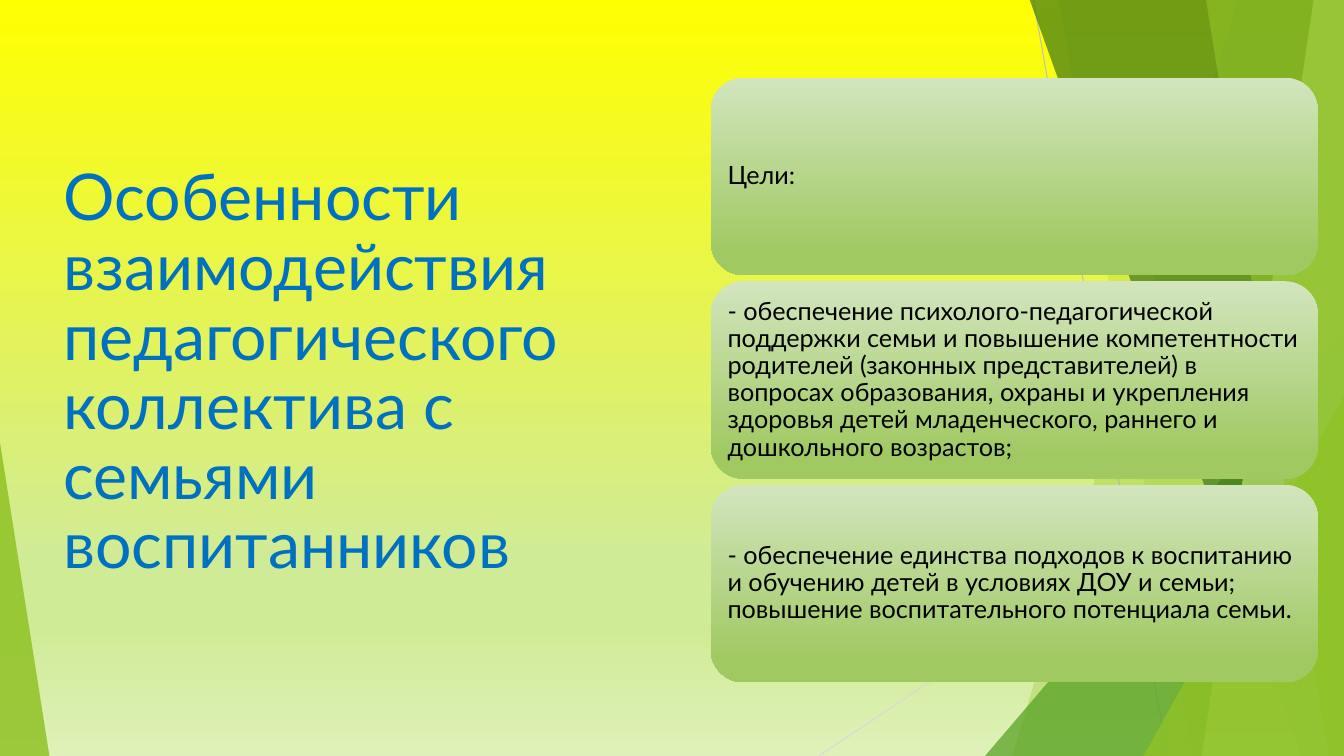
import pptx
import pptx.util
import pptx.dml.color
import pptx.enum.shapes
import pptx.enum.text
import pptx.oxml
import pptx.oxml.ns
import lxml.etree

Inches = pptx.util.Inches
qn = pptx.oxml.ns.qn
kinds = pptx.enum.shapes.MSO_SHAPE


def blend(fill, root, stops):
    fill.gradient()
    fill.gradient_angle = 270
    ramp = next(root.iter(qn("a:gsLst")))
    for old in list(ramp):
        ramp.remove(old)
    for spot, color in stops:
        stop = lxml.etree.SubElement(ramp, qn("a:gs"), pos=str(spot * 1000))
        lxml.etree.SubElement(stop, qn("a:srgbClr"), val=color)


def write(frame, text, size, color):
    frame.word_wrap = True
    frame.vertical_anchor = pptx.enum.text.MSO_ANCHOR.MIDDLE
    para = frame.paragraphs[0]
    para.alignment = pptx.enum.text.PP_ALIGN.LEFT
    para.line_spacing = 0.9
    run = para.add_run()
    run.text = text
    run.font.size = pptx.util.Pt(size)
    run.font.name = "Lato"
    run.font.color.rgb = pptx.dml.color.RGBColor.from_string(color)


deck = pptx.Presentation()
deck.slide_width, deck.slide_height = Inches(13.33), Inches(7.5)
slide = deck.slides.add_slide(deck.slide_layouts[6])
shapes = slide.shapes
blend(slide.background.fill, slide.element,
      [(0, "FFFF00"), (74, "D0EB96"), (83, "D0EB96"), (100, "DFF1B9")])

for x1, y1, x2, y2, color in [
    (10.25, 0, 11.58, 7.5, "BFBFBF"),
    (13.33, 4.03, 8.12, 7.5, "D9D9D9"),
]:
    line = shapes.add_connector(pptx.enum.shapes.MSO_CONNECTOR.STRAIGHT,
                                Inches(x1), Inches(y1), Inches(x2), Inches(y2))
    line.line.width = pptx.util.Pt(0.75)
    line.line.color.rgb = pptx.dml.color.RGBColor.from_string(color)
    lxml.etree.SubElement(line.element.spPr, qn("a:effectLst"))

facets = [
    ("band", (12.28, 10.04), "90C226", 30),
    ("band", (10.5, 11.83), "90C226", 20),
    ("wedge", (9.77, 3.33, 3.56, 1), "54A021", 72),
    ("band", (10.21, 12.91), "3F7819", 70),
    ("band", (13.03, 11.92), "C0E474", 70),
    ("band", (11.96, 13.18), "90C226", 65),
    ("wedge", (11.34, 3.93, 1.99, 1), "90C226", 80),
    ("wedge", (0, 4.39, 0.49, 0), "90C226", 85),
]
for kind, place, color, alpha in facets:
    if kind == "band":
        head, foot = place
        path = shapes.build_freeform(Inches(head), Inches(-0.01))
        path.add_line_segments([(Inches(13.33), Inches(-0.01)),
                                (Inches(13.33), Inches(7.5)),
                                (Inches(foot), Inches(7.5))])
        facet = path.convert_to_shape()
    else:
        left, top, width, peak = place
        facet = shapes.add_shape(kinds.ISOSCELES_TRIANGLE, Inches(left), Inches(top),
                                 Inches(width), Inches(7.5 - top))
        facet.adjustments[0] = peak
    facet.shadow.inherit = False
    facet.line.fill.background()
    facet.fill.solid()
    facet.fill.fore_color.rgb = pptx.dml.color.RGBColor.from_string(color)
    tint = next(facet.element.spPr.iter(qn("a:srgbClr")))
    lxml.etree.SubElement(tint, qn("a:alpha"), val=str(alpha * 1000))

title = shapes.add_textbox(Inches(0.53), Inches(0.53), Inches(5.55), Inches(6.36))
write(title.text_frame,
      "Особенности взаимодействия педагогического коллектива с семьями воспитанников",
      46, "0070C0")

goals = [
    "Цели:",
    "- обеспечение психолого-педагогической поддержки семьи и повышение "
    "компетентности родителей (законных представителей) в вопросах образования, "
    "охраны и укрепления здоровья детей младенческого, раннего и дошкольного возрастов;",
    "- обеспечение единства подходов к воспитанию и обучению детей в условиях ДОУ "
    "и семьи; повышение воспитательного потенциала семьи.",
]
for row, goal in enumerate(goals):
    card = shapes.add_shape(kinds.ROUNDED_RECTANGLE, Inches(7.05),
                            Inches(0.77 + row * 2.02), Inches(6.02), Inches(1.96))
    card.shadow.inherit = False
    card.line.fill.background()
    blend(card.fill, card.element, [(0, "D3E5BE"), (88, "A0C962")])
    frame = card.text_frame
    frame.margin_left = frame.margin_right = Inches(0.07)
    frame.margin_top = frame.margin_bottom = Inches(0.07)
    write(frame, goal, 18, "000000")

deck.save("out.pptx")
